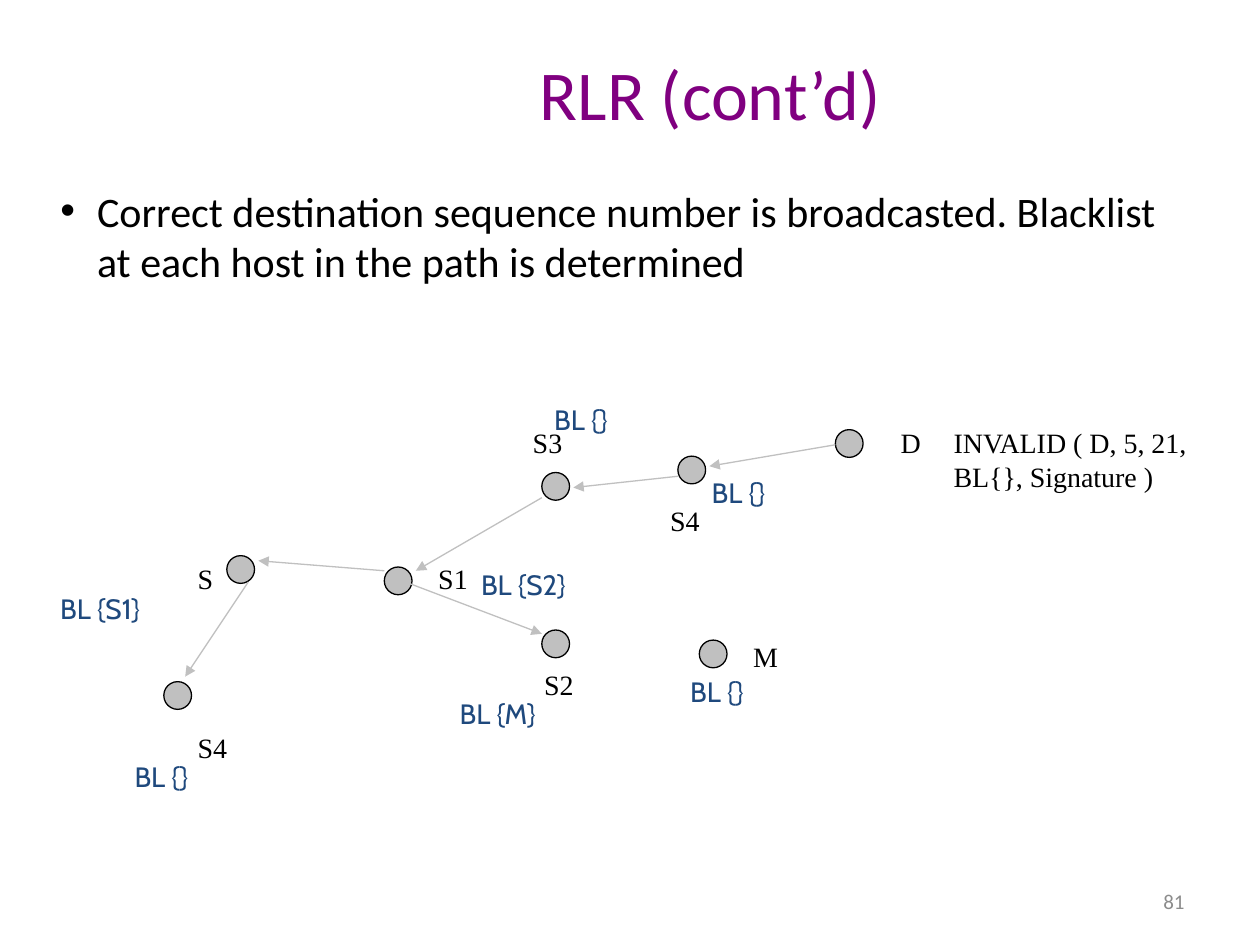
from dataclasses import dataclass

from lxml import etree
from pptx import Presentation
from pptx.dml.color import RGBColor
from pptx.enum.shapes import MSO_CONNECTOR, MSO_SHAPE
from pptx.enum.text import MSO_ANCHOR, PP_ALIGN
from pptx.oxml.ns import qn
from pptx.util import Inches, Pt

STRAIGHT = MSO_CONNECTOR.STRAIGHT
OVAL = MSO_SHAPE.OVAL
TOP, MIDDLE = MSO_ANCHOR.TOP, MSO_ANCHOR.MIDDLE
LEFT, CENTER, RIGHT, JUSTIFY = PP_ALIGN.LEFT, PP_ALIGN.CENTER, PP_ALIGN.RIGHT, PP_ALIGN.JUSTIFY


@dataclass(frozen=True)
class TextStyle:
    font: str
    size: int
    color: str
    align: PP_ALIGN = LEFT
    anchor: MSO_ANCHOR = TOP


@dataclass(frozen=True)
class Theme:
    title = TextStyle("Calibri", 40, "800080", CENTER, MIDDLE)
    body = TextStyle("Calibri", 24, "000000")
    host = TextStyle("Times New Roman", 16, "000000", JUSTIFY)
    message = TextStyle("Times New Roman", 16, "000000")
    blacklist = TextStyle("Cabin", 16, "1F497D", LEFT, MIDDLE)
    number = TextStyle("Calibri", 12, "8C8C8C", RIGHT, MIDDLE)
    node_fill = "C0C0C0"
    node_line = "000000"
    arrow = "C0C0C0"
    line_width = 0.75


class SlideBuilder:
    """Draws themed elements on a grid of 100 columns by 75 rows."""

    columns, rows = 100, 75

    def __init__(self, presentation, theme):
        self.theme = theme
        self.column = presentation.slide_width / self.columns
        self.row = presentation.slide_height / self.rows
        self.slide = presentation.slides.add_slide(presentation.slide_layouts[1])

    def place(self, left, top, width, height):
        return (round(left * self.column), round(top * self.row),
                round(width * self.column), round(height * self.row))

    def fill_text(self, shape, text, style):
        frame = shape.text_frame
        frame.text = text
        frame.word_wrap = True
        frame.vertical_anchor = style.anchor
        paragraph = frame.paragraphs[0]
        paragraph.alignment = style.align
        font = paragraph.runs[0].font
        font.name, font.size = style.font, Pt(style.size)
        font.color.rgb = RGBColor.from_string(style.color)
        return paragraph

    def placeholder(self, index, text, box, style):
        shape = self.slide.placeholders[index]
        shape.left, shape.top, shape.width, shape.height = self.place(*box)
        return self.fill_text(shape, text, style)

    def bullet(self, text, box, indent):
        paragraph = self.placeholder(1, text, box, self.theme.body)
        properties = paragraph._p.get_or_add_pPr()
        properties.set("marL", str(Inches(indent)))
        properties.set("indent", str(-Inches(indent)))

    def label(self, text, box, style):
        self.fill_text(self.slide.shapes.add_textbox(*self.place(*box)), text, style)

    def node(self, left, top, size=2.2):
        shape = self.slide.shapes.add_shape(OVAL, *self.place(left, top, size, size))
        shape.shadow.inherit = False
        shape.fill.solid()
        shape.fill.fore_color.rgb = RGBColor.from_string(self.theme.node_fill)
        shape.line.color.rgb = RGBColor.from_string(self.theme.node_line)
        shape.line.width = Pt(self.theme.line_width)

    def arrow(self, start, end):
        connector = self.slide.shapes.add_connector(
            STRAIGHT, *self.place(*start, *end))
        connector.line.color.rgb = RGBColor.from_string(self.theme.arrow)
        connector.line.width = Pt(self.theme.line_width)
        properties = connector._element.spPr
        etree.SubElement(properties.find(qn("a:ln")), qn("a:tailEnd"), type="triangle")
        etree.SubElement(properties, qn("a:effectLst"))


NODES = [(66.3, 34.1), (53.8, 36.2), (43, 37.5), (30.5, 45),
         (18, 44.1), (13, 54.1), (43, 50), (55.5, 50.8)]

HOSTS = [("D", 70.5, 33.3), ("S4", 52.2, 39.5), ("S3", 41.3, 33.3), ("S1", 33.8, 44.1),
         ("S", 14.7, 44.1), ("S4", 14.7, 57.5), ("S2", 42.2, 52.5), ("M", 58.8, 50.3)]

BLACKLISTS = [("BL {}", 43, 31.2), ("BL {}", 55.5, 37), ("BL {S2}", 37.2, 44.3),
              ("BL {S1}", 3.8, 46.2), ("BL {}", 9.7, 59.5), ("BL {M}", 35.5, 54.5),
              ("BL {}", 53.8, 52.8)]

ARROWS = [((66.3, 35.3), (56.3, 37)), ((53.8, 37.8), (45.5, 38.7)),
          ((43, 39.5), (33, 45.3)), ((30.5, 45.3), (20.5, 44.5)),
          ((32.2, 46.2), (43, 50.3)), ((19.7, 46.2), (14.7, 53.7))]


def main():
    presentation = Presentation()
    presentation.slide_width, presentation.slide_height = Inches(10), Inches(7.5)
    theme = Theme()
    builder = SlideBuilder(presentation, theme)
    builder.placeholder(0, "RLR (cont’d)", (12.7, 3.1, 87.3, 8.5), theme.title)
    builder.bullet("Correct destination sequence number is broadcasted. "
                   "Blacklist at each host in the path is determined",
                   (3.8, 14.2, 89.1, 16.1), 0.29)
    for left, top in NODES:
        builder.node(left, top)
    for start, end in ARROWS:
        builder.arrow(start, end)
    for text, left, top in HOSTS:
        builder.label(text, (left, top, 5, 2.5), theme.host)
    for text, left, top in BLACKLISTS:
        builder.label(text, (left, top, 10, 4.2), theme.blacklist)
    builder.label("INVALID ( D, 5, 21, BL{}, Signature )",
                  (74.7, 33.3, 21.7, 6.4), theme.message)
    builder.label("81", (71.7, 69.5, 23.3, 4), theme.number)
    presentation.save("out.pptx")


if __name__ == "__main__":
    main()
